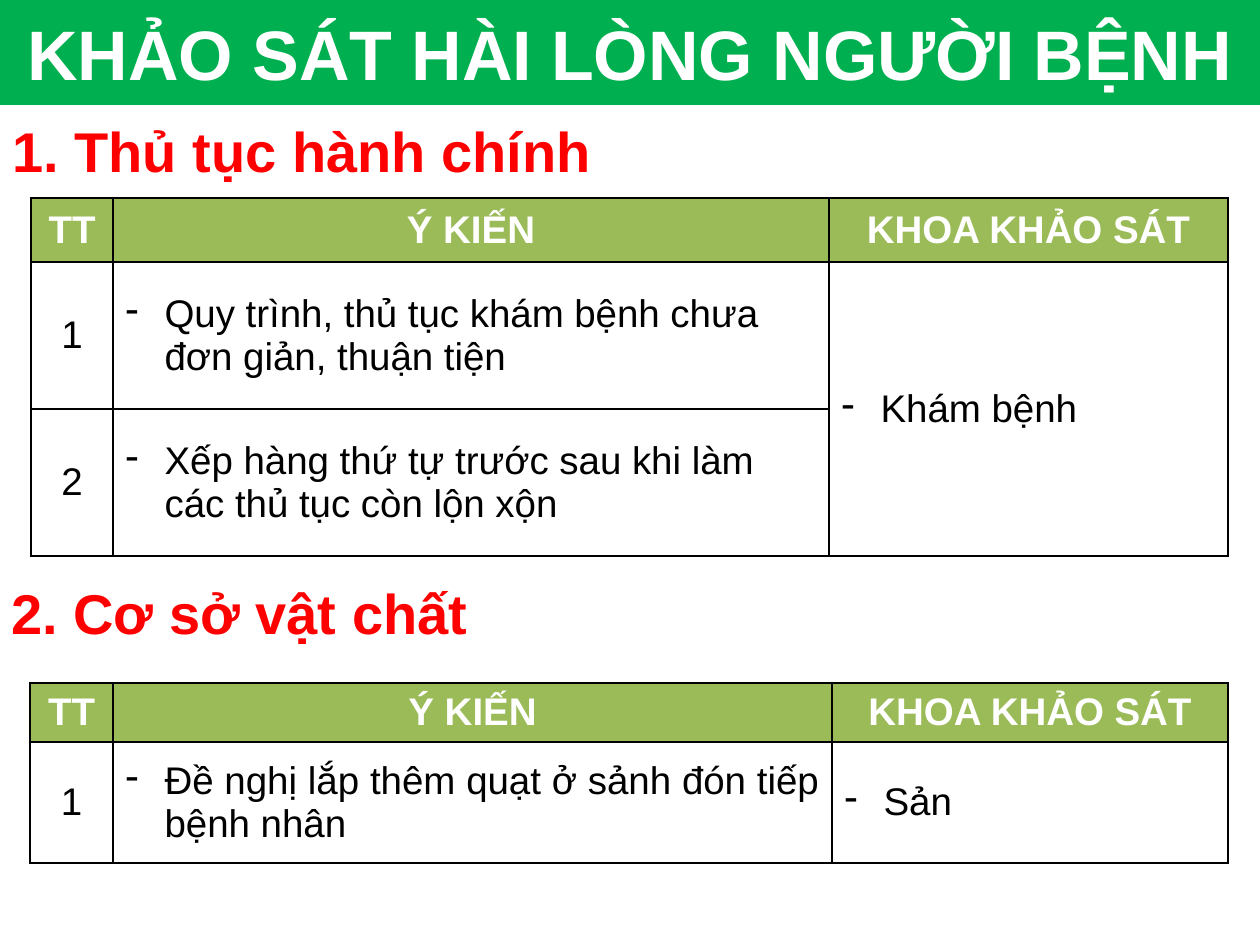
from dataclasses import dataclass

from lxml import etree
from pptx import Presentation
from pptx import util as u
from pptx.dml.color import RGBColor
from pptx.enum import text
from pptx.oxml import ns

PX = u.Inches(1) / 126


@dataclass(frozen=True)
class Theme:
    font: str = "Arial"
    banner: RGBColor = RGBColor(0x00, 0xB0, 0x50)
    header: RGBColor = RGBColor(0x9B, 0xBB, 0x59)
    heading: RGBColor = RGBColor(0xFF, 0x00, 0x00)
    light: RGBColor = RGBColor(0xFF, 0xFF, 0xFF)
    ink: RGBColor = RGBColor(0x00, 0x00, 0x00)
    title_size: int = 40
    heading_size: int = 32
    cell_size: int = 22


THEME = Theme()
HEADERS = ["TT", "Ý KIẾN", "KHOA KHẢO SÁT"]


def px(length):
    return u.Emu(round(length * PX))


def write(paragraph, words, size, color, bold=False):
    run = paragraph.add_run()
    run.text = words
    run.font.name = THEME.font
    run.font.size = u.Pt(size)
    run.font.bold = bold
    run.font.color.rgb = color


def add_dash(paragraph):
    properties = paragraph._p.get_or_add_pPr()
    properties.set("marL", str(px(39)))
    properties.set("indent", str(px(-39)))
    etree.SubElement(properties, ns.qn("a:buFontTx"))
    etree.SubElement(properties, ns.qn("a:buChar")).set("char", "-")


def add_borders(cell):
    properties = cell._tc.get_or_add_tcPr()
    for side in ("lnL", "lnR", "lnT", "lnB"):
        line = etree.SubElement(properties, ns.qn(f"a:{side}"), w=str(u.Pt(1)))
        paint = etree.SubElement(line, ns.qn("a:solidFill"))
        etree.SubElement(paint, ns.qn("a:srgbClr"), val=str(THEME.ink))


def add_banner(slide, box, words):
    banner = slide.shapes.title
    banner.left, banner.top, banner.width, banner.height = map(px, box)
    banner.fill.solid()
    banner.fill.fore_color.rgb = THEME.banner
    frame = banner.text_frame
    frame.word_wrap = True
    frame.auto_size = text.MSO_AUTO_SIZE.NONE
    frame.vertical_anchor = text.MSO_ANCHOR.MIDDLE
    paragraph = frame.paragraphs[0]
    paragraph.alignment = text.PP_ALIGN.CENTER
    write(paragraph, words, THEME.title_size, THEME.light, True)


def add_heading(slide, box, words):
    frame = slide.shapes.add_textbox(*map(px, box)).text_frame
    frame.word_wrap = True
    frame.auto_size = text.MSO_AUTO_SIZE.SHAPE_TO_FIT_TEXT
    write(frame.paragraphs[0], words, THEME.heading_size, THEME.heading, True)


def add_opinions(slide, left, top, columns, rows, opinions, department,
                 opinion_align=text.PP_ALIGN.LEFT):
    box = (left, top, sum(columns), sum(rows))
    survey = slide.shapes.add_table(
        len(rows), len(columns), *map(px, box)).table
    for column, width in zip(survey.columns, columns):
        column.width = px(width)
    for row, height in zip(survey.rows, rows):
        row.height = px(height)

    content = [HEADERS]
    for number, opinion in enumerate(opinions, 1):
        content.append([str(number), opinion, department if number == 1 else ""])
    body_aligns = [text.PP_ALIGN.CENTER, opinion_align, text.PP_ALIGN.LEFT]

    for r, entries in enumerate(content):
        for c, words in enumerate(entries):
            cell = survey.cell(r, c)
            add_borders(cell)
            cell.vertical_anchor = text.MSO_ANCHOR.MIDDLE
            paragraph = cell.text_frame.paragraphs[0]
            if r == 0:
                cell.fill.solid()
                cell.fill.fore_color.rgb = THEME.header
                paragraph.alignment = text.PP_ALIGN.CENTER
            else:
                cell.fill.background()
                paragraph.alignment = body_aligns[c]
                if c > 0 and words:
                    add_dash(paragraph)
            if words:
                color = THEME.light if r == 0 else THEME.ink
                write(paragraph, words, THEME.cell_size, color, r == 0)

    if len(opinions) > 1:
        survey.cell(1, 2).merge(survey.cell(len(opinions), 2))


def main():
    deck = Presentation()
    deck.slide_width, deck.slide_height = px(1260), px(945)
    slide = deck.slides.add_slide(deck.slide_layouts[5])

    add_banner(slide, (0, 0, 1260, 105), "KHẢO SÁT HÀI LÒNG NGƯỜI BỆNH")
    add_heading(slide, (0, 110, 1260, 81), "1. Thủ tục hành chính")
    add_opinions(
        slide, 31, 198, (82, 716, 399), (64, 147, 147),
        ["Quy trình, thủ tục khám bệnh chưa đơn giản, thuận tiện",
         "Xếp hàng thứ tự trước sau khi làm các thủ tục còn lộn xộn"],
        "Khám bệnh")
    add_heading(slide, (-1, 572, 1260, 81), "2. Cơ sở vật chất")
    add_opinions(
        slide, 30, 683, (83, 719, 396), (59, 121),
        ["Đề nghị lắp thêm quạt ở sảnh đón tiếp bệnh nhân"],
        "Sản", text.PP_ALIGN.JUSTIFY)

    deck.save("out.pptx")


if __name__ == "__main__":
    main()
